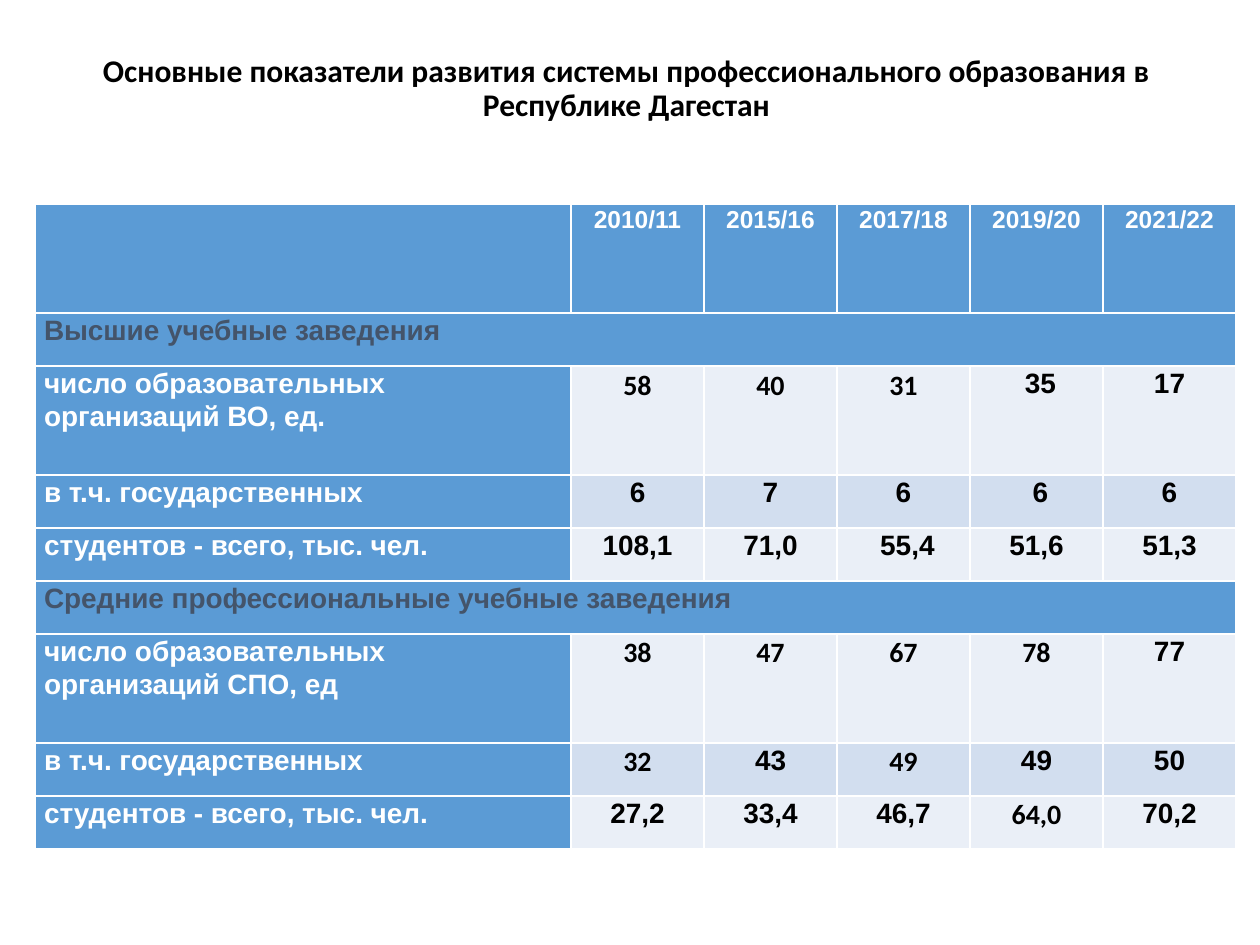
"""Build a slide with a table of vocational education figures for Dagestan."""
from pptx import Presentation
from pptx.dml.color import RGBColor
from pptx.enum.text import MSO_ANCHOR, MSO_AUTO_SIZE, PP_ALIGN
from pptx.util import Emu, Pt


def px(n):
    return Emu(round(n * 914400 / 126))


def style(para, size, face, color, align, spacing):
    para.alignment = align
    para.line_spacing = spacing
    font = para.font
    font.size, font.name, font.bold = Pt(size), face, True
    font.color.rgb = RGBColor.from_string(color)


BLUE, PALE, LIGHT = "5B9BD5", "EAEFF7", "D2DEEF"
WHITE, BLACK, SLATE = "FFFFFF", "000000", "44546A"

deck = Presentation()
deck.slide_width, deck.slide_height = px(1260), px(945)
slide = deck.slides.add_slide(deck.slide_layouts[5])

title = slide.shapes.title
title.left, title.top, title.width, title.height = px(67), px(63), px(1119), px(53)
frame = title.text_frame
frame.text = "Основные показатели развития системы профессионального образования в Республике Дагестан"
frame.auto_size = MSO_AUTO_SIZE.NONE
frame.vertical_anchor = MSO_ANCHOR.MIDDLE
style(frame.paragraphs[0], 18, "Calibri", BLACK, PP_ALIGN.CENTER, 0.9)

rows = [
    ["", "2010/11", "2015/16", "2017/18", "2019/20", "2021/22"],
    ["Высшие учебные заведения"],
    ["число образовательных организаций ВО, ед.", "58", "40", "31", " 35", "17"],
    ["в т.ч. государственных", "6", "7", "6", " 6", "6"],
    ["студентов - всего, тыс. чел.", "108,1", "71,0", " 55,4", "51,6", "51,3"],
    ["Средние профессиональные учебные заведения"],
    ["число образовательных организаций СПО, ед", "38", "47", "67", "78", "77"],
    ["в т.ч. государственных", "32", "43", "49", "49", "50"],
    ["студентов - всего, тыс. чел.", "27,2", "33,4", "46,7", "64,0", "70,2"],
]
calibri = {2: (1, 2, 3), 6: (1, 2, 3, 4), 7: (1, 3), 8: (4,)}
tall = (0, 2, 6)

table = slide.shapes.add_table(9, 6, px(35), px(204), px(1201), px(645)).table
table.first_col = True
for c, col in enumerate(table.columns):
    col.width = px(133 if c else 536)

for r, texts in enumerate(rows):
    table.rows[r].height = px(109 if r in tall else 53)
    group = len(texts) == 1
    if group:
        table.cell(r, 0).merge(table.cell(r, 5))
    for c, text in enumerate(texts):
        cell = table.cell(r, c)
        cell.margin_left = cell.margin_right = px(9)
        cell.margin_top = cell.margin_bottom = 0
        head = r == 0 or c == 0
        shade = BLUE if head else LIGHT if r in (3, 7) else PALE
        cell.fill.solid()
        cell.fill.fore_color.rgb = RGBColor.from_string(shade)
        cell.text = text
        face = "Calibri" if c in calibri.get(r, ()) else "Arial"
        color = SLATE if group else WHITE if head else BLACK
        align = PP_ALIGN.CENTER if c else PP_ALIGN.LEFT
        style(cell.text_frame.paragraphs[0], 16 if r else 14, face, color, align, 1.07)

deck.save("out.pptx")
